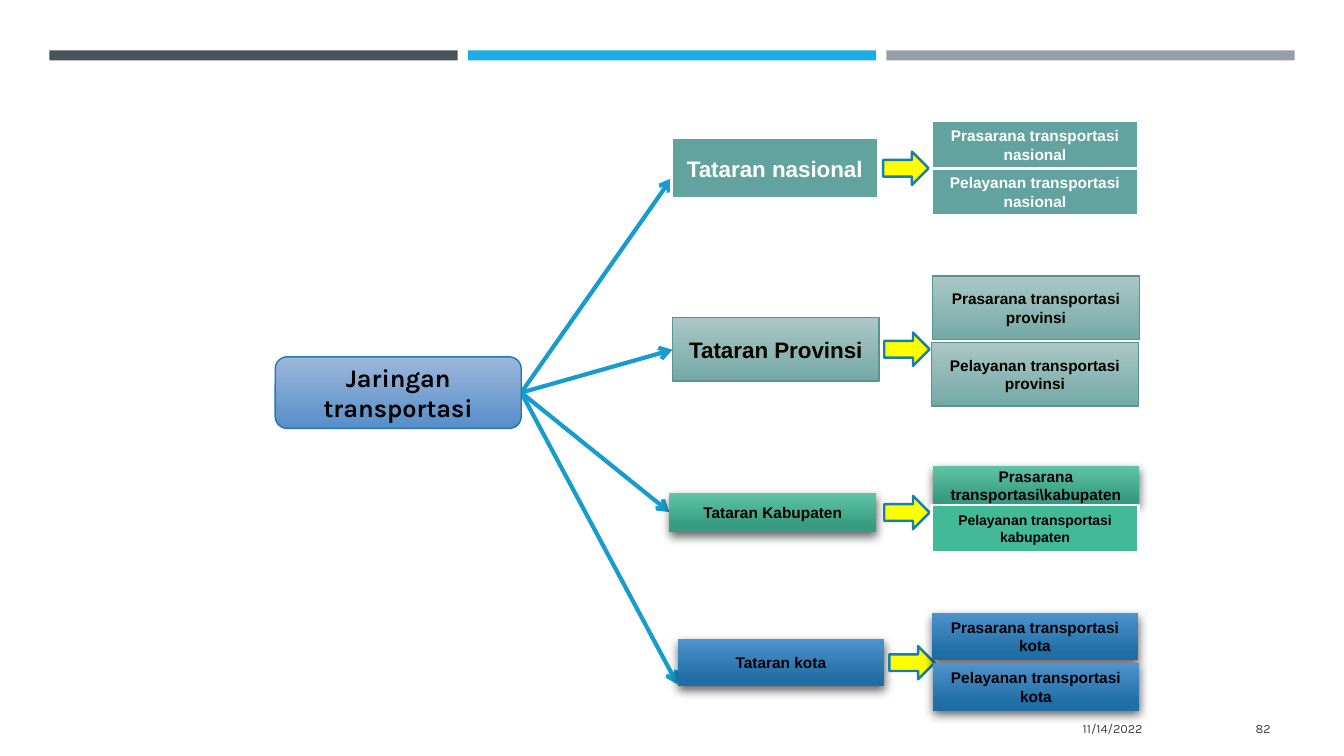
from collections import namedtuple

from lxml import etree
from pptx import Presentation
from pptx.dml.color import RGBColor
from pptx.enum.shapes import MSO_CONNECTOR as Connector, MSO_SHAPE as Shape
from pptx.enum.text import MSO_ANCHOR as Anchor, PP_ALIGN as Align
from pptx.oxml import parse_xml
from pptx.oxml.ns import nsdecls, qn
from pptx.util import Inches, Pt

BLACK = RGBColor(0x00, 0x00, 0x00)
WHITE = RGBColor(0xFF, 0xFF, 0xFF)
YELLOW = RGBColor(0xFF, 0xFF, 0x00)
FOOTER_GREY = RGBColor(0x40, 0x40, 0x40)
BAR_COLORS = (
    RGBColor(0x46, 0x53, 0x59),
    RGBColor(0x1C, 0xAD, 0xE4),
    RGBColor(0x96, 0x9F, 0xA7),
)
BRANCH_BLUE = RGBColor(0x18, 0x9C, 0xCE)
ARROW_EDGE = RGBColor(0x15, 0x80, 0xA9)
ROOT_EDGE = RGBColor(0x22, 0x76, 0xB2)
ROOT_TOP = RGBColor(0x9D, 0xB7, 0xDA)
ROOT_BOTTOM = RGBColor(0x57, 0x8E, 0xC9)
TEAL = RGBColor(0x62, 0xA3, 0x9F)
SAGE_TOP = RGBColor(0xAA, 0xC7, 0xC5)
SAGE_BOTTOM = RGBColor(0x75, 0xA9, 0xA6)
SAGE_EDGE = RGBColor(0x57, 0x94, 0x90)
GREEN = RGBColor(0x42, 0xBA, 0x97)
GREEN_TOP = RGBColor(0x60, 0xC3, 0xA5)
GREEN_BOTTOM = RGBColor(0x37, 0x9C, 0x7F)
BLUE_TOP = RGBColor(0x4D, 0x93, 0xCD)
BLUE_BOTTOM = RGBColor(0x20, 0x6E, 0xA6)

Look = namedtuple("Look", "colors edge edge_width ink last_stop shadow", defaults=(1, False))
Box = namedtuple("Box", "left top width height")
Detail = namedtuple("Detail", "text left top height size look")
Tier = namedtuple("Tier", "name box size look branch_y arrow_left details")

ROOT = Look((ROOT_TOP, ROOT_BOTTOM), ROOT_EDGE, 1, BLACK)
NATIONAL = Look((TEAL,), WHITE, 2, WHITE)
PROVINCE = Look((SAGE_TOP, SAGE_BOTTOM), SAGE_EDGE, 1, BLACK)
REGENCY = Look((GREEN_TOP, GREEN_BOTTOM), None, 0, BLACK, 0.84, True)
REGENCY_FLAT = Look((GREEN,), WHITE, 2, BLACK)
CITY = Look((BLUE_TOP, BLUE_BOTTOM), None, 0, BLACK, 0.84, True)

TIER_WIDTH = 2.05
ROOT_BOX = Box(2.73, 3.54, 2.44, 0.71)
TIERS = (
    Tier("Tataran nasional", Box(6.66, 1.37, TIER_WIDTH, 0.6), 16, NATIONAL, 1.77, 8.76, (
        Detail("Prasarana transportasi nasional", 9.24, 1.2, 0.47, 11, NATIONAL),
        Detail("Pelayanan transportasi nasional", 9.24, 1.67, 0.47, 11, NATIONAL))),
    Tier("Tataran Provinsi", Box(6.67, 3.15, TIER_WIDTH, 0.63), 16, PROVINCE, 3.47, 8.77, (
        Detail("Prasarana transportasi provinsi", 9.25, 2.74, 0.63, 11, PROVINCE),
        Detail("Pelayanan transportasi provinsi", 9.24, 3.4, 0.63, 11, PROVINCE))),
    Tier("Tataran Kabupaten", Box(6.64, 4.89, TIER_WIDTH, 0.39), 11, REGENCY, 5.08, 8.77, (
        Detail("Prasarana transportasi\\kabupaten", 9.25, 4.62, 0.39, 11, REGENCY),
        Detail("Pelayanan transportasi kabupaten", 9.24, 5.01, 0.47, 10, REGENCY_FLAT))),
    Tier("Tataran kota", Box(6.72, 6.34, TIER_WIDTH, 0.47), 11, CITY, 6.79, 8.82, (
        Detail("Prasarana transportasi kota", 9.24, 6.08, 0.47, 11, CITY),
        Detail("Pelayanan transportasi kota", 9.25, 6.58, 0.47, 11, CITY))),
)


def write(frame, text, size, font, ink, align, bold):
    frame.word_wrap = True
    frame.vertical_anchor = Anchor.MIDDLE
    frame.text = text
    paragraph = frame.paragraphs[0]
    paragraph.alignment = align
    lettering = paragraph.runs[0].font
    lettering.size = Pt(size)
    lettering.name = font
    lettering.bold = bold
    lettering.color.rgb = ink


def paint(shape, look):
    shape.shadow.inherit = False
    if len(look.colors) == 1:
        shape.fill.solid()
        shape.fill.fore_color.rgb = look.colors[0]
    else:
        shape.fill.gradient()
        shape.fill.gradient_angle = 270
        for stop, color, position in zip(shape.fill.gradient_stops, look.colors, (0, look.last_stop)):
            stop.color.rgb = color
            stop.position = position
    if look.edge is None:
        shape.line.fill.background()
    else:
        shape.line.color.rgb = look.edge
        shape.line.width = Pt(look.edge_width)
    if look.shadow:
        effects = shape._element.spPr.find(qn("a:effectLst"))
        effects.append(parse_xml(
            f'<a:outerShdw {nsdecls("a")} blurRad="{Pt(7)}" dist="{Pt(3)}" dir="{84 * 60000}" '
            'rotWithShape="0"><a:srgbClr val="000000"><a:alpha val="60000"/></a:srgbClr></a:outerShdw>'))


def add_block(slide, box, look, kind=Shape.RECTANGLE):
    block = slide.shapes.add_shape(kind, *map(Inches, box))
    paint(block, look)
    return block


def add_label(slide, box, text, size, look, kind=Shape.RECTANGLE, font="Arial"):
    block = add_block(slide, box, look, kind)
    write(block.text_frame, text, size, font, look.ink, Align.CENTER, True)


def add_header_bars(slide, box):
    gap = 0.1
    width = (box.width - gap * (len(BAR_COLORS) - 1)) / len(BAR_COLORS)
    for column, color in enumerate(BAR_COLORS):
        bar = Box(box.left + column * (width + gap), box.top, width, box.height)
        add_block(slide, bar, Look((color,), None, 0, WHITE))


def add_branch(slide, start, end):
    branch = slide.shapes.add_connector(Connector.STRAIGHT, *map(Inches, start + end))
    branch.line.color.rgb = BRANCH_BLUE
    branch.line.width = Pt(3)
    etree.SubElement(branch.line._get_or_add_ln(), qn("a:tailEnd"), type="arrow")
    etree.SubElement(branch._element.spPr, qn("a:effectLst"))


def add_root(slide, box):
    start = (box.left + box.width, box.top + box.height / 2)
    for tier in TIERS:
        add_branch(slide, start, (tier.box.left, tier.branch_y))
    add_label(slide, box, "Jaringan transportasi", 18, ROOT, Shape.ROUNDED_RECTANGLE, "Karla")


def add_tier(slide, tier):
    box = tier.box
    add_label(slide, box, tier.name, tier.size, tier.look)
    height = 0.33
    arrow = Box(tier.arrow_left, box.top + (box.height - height) / 2, 0.45, height)
    add_block(slide, arrow, Look((YELLOW,), ARROW_EDGE, 1.75, BLACK), Shape.RIGHT_ARROW)
    for detail in tier.details:
        place = Box(detail.left, detail.top, TIER_WIDTH, detail.height)
        add_label(slide, place, detail.text, detail.size, detail.look)


def add_footer(slide, box, text):
    footer = slide.shapes.add_textbox(*map(Inches, box))
    write(footer.text_frame, text, 9, "Karla", FOOTER_GREY, Align.RIGHT, False)


def main():
    deck = Presentation()
    deck.slide_width = Inches(13.33)
    deck.slide_height = Inches(7.5)
    slide = deck.slides.add_slide(deck.slide_layouts.get_by_name("Blank"))
    add_header_bars(slide, Box(0.49, 0.5, 12.35, 0.1))
    add_root(slide, ROOT_BOX)
    for tier in TIERS:
        add_tier(slide, tier)
    add_footer(slide, Box(8.32, 7.03, 3.11, 0.4), "11/14/2022")
    add_footer(slide, Box(11.55, 7.03, 1.15, 0.4), "82")
    deck.save("out.pptx")


if __name__ == "__main__":
    main()
